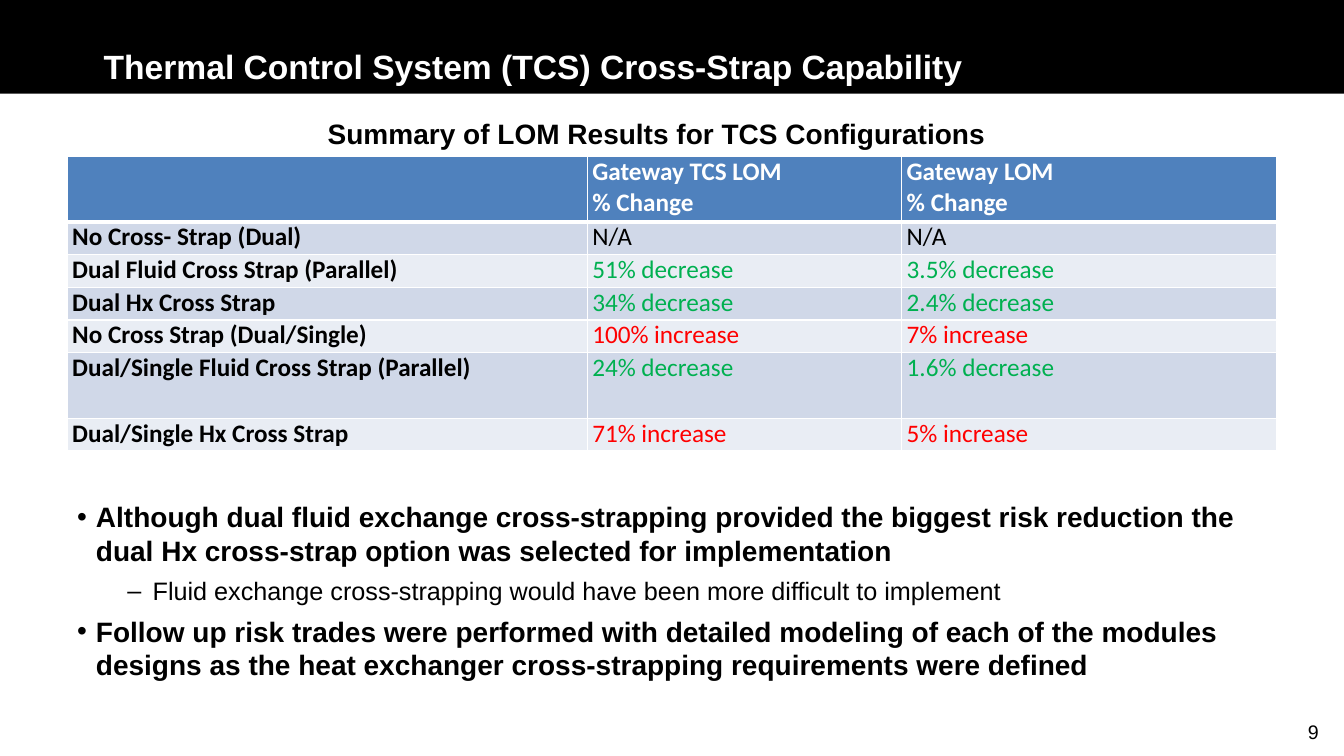
from dataclasses import dataclass

from lxml import etree
from pptx import Presentation
from pptx.dml.color import RGBColor
from pptx.enum.shapes import MSO_SHAPE
from pptx.enum.text import MSO_ANCHOR, PP_ALIGN
from pptx.oxml.ns import qn
from pptx.util import Pt

RECT = MSO_SHAPE.RECTANGLE
TOP, MIDDLE = MSO_ANCHOR.TOP, MSO_ANCHOR.MIDDLE
LEFT, RIGHT = PP_ALIGN.LEFT, PP_ALIGN.RIGHT


@dataclass(frozen=True)
class Theme:
    black: str = "000000"
    white: str = "FFFFFF"
    head: str = "4F81BD"
    bands: tuple = ("D0D8E8", "E9EDF4")
    good: str = "00B050"
    bad: str = "FF0000"
    sans: str = "Arial"
    grid: str = "Calibri"
    title: int = 24
    lead: int = 20
    body: int = 18
    page: int = 14


THEME = Theme()

ROWS = [
    ("No Cross- Strap (Dual)", "N/A", "N/A"),
    ("Dual Fluid Cross Strap (Parallel)", "51% decrease", "3.5% decrease"),
    ("Dual Hx Cross Strap", "34% decrease", "2.4% decrease"),
    ("No Cross Strap (Dual/Single)", "100% increase", "7% increase"),
    ("Dual/Single Fluid Cross Strap (Parallel)", "24% decrease", "1.6% decrease"),
    ("Dual/Single Hx Cross Strap", "71% increase", "5% increase"),
]
HEADS = ("", "Gateway TCS LOM\n% Change", "Gateway LOM\n% Change")
WIDTHS = (371.5, 224.6, 267.9)
SHORT, TALL = 23.4, 46.8
HEIGHTS = (TALL, SHORT, SHORT, SHORT, SHORT, TALL, SHORT)

POINTS = [
    (0, "Although dual fluid exchange cross-strapping provided the biggest risk "
        "reduction the dual Hx cross-strap option was selected for implementation"),
    (1, "Fluid exchange cross-strapping would have been more difficult to implement"),
    (0, "Follow up risk trades were performed with detailed modeling of each of the "
        "modules designs as the heat exchanger cross-strapping requirements were defined"),
]
# level: bullet, left margin, hang, size, bold
LEVELS = {0: ("•", 13.5, 13.5, THEME.lead, True),
          1: ("–", 54, 18, THEME.body, False)}


def style(font, color, **form):
    for key, val in form.items():
        setattr(font, key, val)
    font.color.rgb = RGBColor.from_string(color)


def text_box(slide, box, anchor=TOP):
    frame = slide.shapes.add_textbox(*map(Pt, box)).text_frame
    frame.word_wrap = True
    frame.vertical_anchor = anchor
    return frame


def add_label(slide, box, text, size, color=THEME.black, bold=True,
              align=LEFT, anchor=TOP):
    para = text_box(slide, box, anchor).paragraphs[0]
    para.text = text
    para.alignment = align
    style(para.font, color, name=THEME.sans, size=Pt(size), bold=bold)


def add_banner(slide, box, text):
    left, top, width, height = box
    bar = slide.shapes.add_shape(RECT, *map(Pt, box))
    bar.shadow.inherit = False
    bar.fill.solid()
    bar.fill.fore_color.rgb = RGBColor.from_string(THEME.black)
    bar.line.fill.background()
    add_label(slide, (left + 67, top + 32, width - 198, height - 37), text,
              THEME.title, THEME.white, anchor=MIDDLE)


def add_edges(cell, widths):
    """Draw white borders; widths maps each side to its points."""
    props = cell._tc.get_or_add_tcPr()
    for side, width in widths.items():
        line = etree.SubElement(props, qn("a:ln" + side), w=str(Pt(width)))
        fill = etree.SubElement(line, qn("a:solidFill"))
        etree.SubElement(fill, qn("a:srgbClr"), val=THEME.white)


def value_color(text):
    if "decrease" in text:
        return THEME.good
    return THEME.bad if "increase" in text else THEME.black


def fill_cell(cell, text, row, col):
    head = row == 0
    add_edges(cell, {"L": 1, "R": 1, "T": 3 if row == 1 else 1,
                     "B": 3 if head else 1})
    cell.fill.solid()
    back = THEME.head if head else THEME.bands[(row - 1) % 2]
    cell.fill.fore_color.rgb = RGBColor.from_string(back)
    for side, gap in {"left": 3.6, "right": 3.6, "top": 0, "bottom": 0}.items():
        setattr(cell, "margin_" + side, Pt(gap))
    cell.text = text
    color = THEME.white if head else value_color(text)
    for para in cell.text_frame.paragraphs:
        style(para.font, color, name=THEME.grid, size=Pt(THEME.body),
              bold=head or col == 0)


def add_results(slide, box):
    data = [HEADS, *ROWS]
    table = slide.shapes.add_table(len(data), len(HEADS), *map(Pt, box)).table
    for col, width in zip(table.columns, WIDTHS):
        col.width = Pt(width)
    for line, height in zip(table.rows, HEIGHTS):
        line.height = Pt(height)
    for row, texts in enumerate(data):
        for col, text in enumerate(texts):
            fill_cell(table.cell(row, col), text, row, col)


def add_points(slide, box):
    frame = text_box(slide, box)
    for num, (level, text) in enumerate(POINTS):
        para = frame.add_paragraph() if num else frame.paragraphs[0]
        mark, margin, hang, size, bold = LEVELS[level]
        para.text = text
        para.level = level
        para.space_after = Pt(6)
        props = para._p.get_or_add_pPr()
        props.set("marL", str(Pt(margin)))
        props.set("indent", str(-Pt(hang)))
        etree.SubElement(props, qn("a:buFont"), typeface=THEME.sans)
        etree.SubElement(props, qn("a:buChar"), char=mark)
        style(para.font, THEME.black, name=THEME.sans, size=Pt(size), bold=bold)


def main():
    deck = Presentation()
    deck.slide_width, deck.slide_height = Pt(960), Pt(540)
    slide = deck.slides.add_slide(deck.slide_layouts[6])
    add_banner(slide, (0, 0, 960, 67),
               "Thermal Control System (TCS) Cross-Strap Capability")
    add_label(slide, (844.5, 510.5, 104.5, 24.5), "9", THEME.page,
              bold=False, align=RIGHT)
    add_results(slide, (48, 111.6, sum(WIDTHS), sum(HEIGHTS)))
    add_label(slide, (227, 80, 535, 31.5),
              "Summary of LOM Results for TCS Configurations", THEME.lead)
    add_points(slide, (48, 353.5, 864, 129))
    deck.save("out.pptx")


if __name__ == "__main__":
    main()
